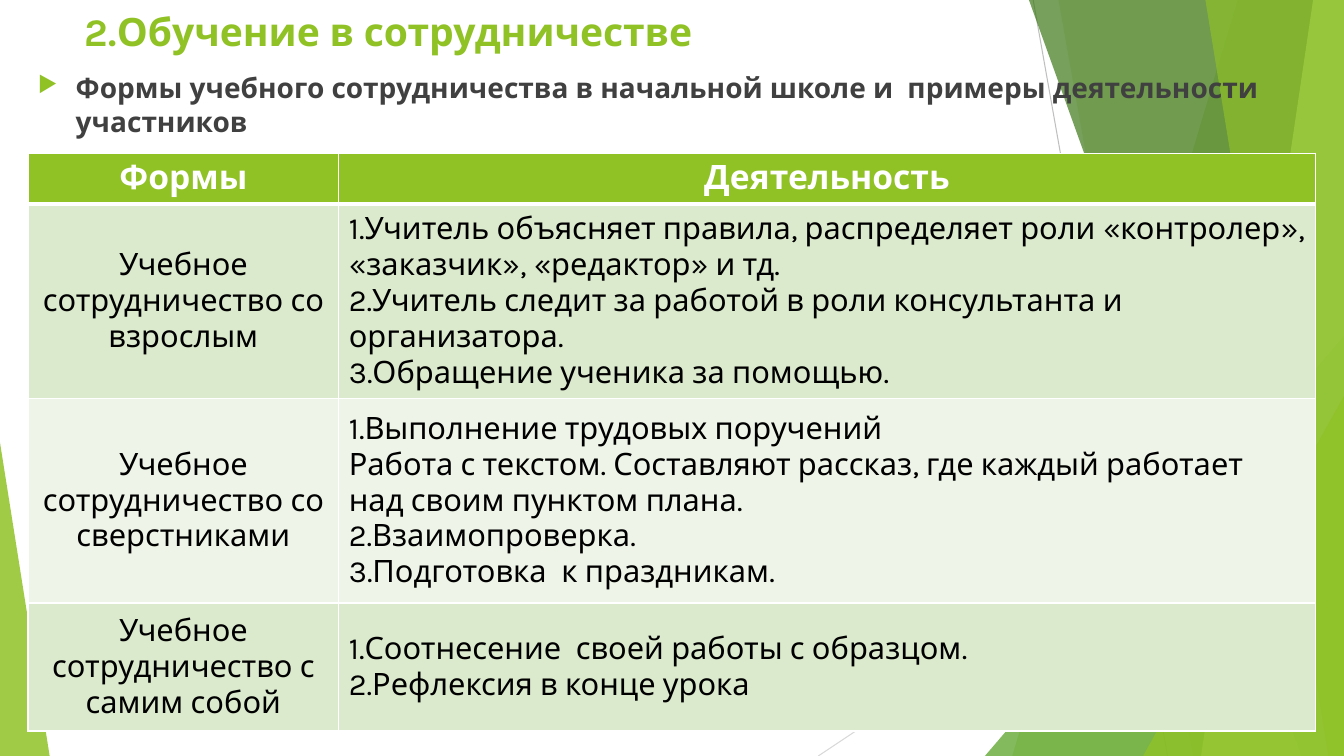
from dataclasses import dataclass

from lxml import etree
from pptx import Presentation
from pptx.dml.color import RGBColor
from pptx.enum import shapes, text
from pptx.oxml import ns
from pptx.util import Pt

WIDTH, HEIGHT = 960, 540


@dataclass(frozen=True)
class Theme:
    font: str = "Karla"
    green: str = "90C226"
    leaf: str = "54A021"
    forest: str = "3F7819"
    lime: str = "C0E474"
    band_dark: str = "DBE9CD"
    band_light: str = "EEF4E8"
    white: str = "FFFFFF"
    black: str = "000000"
    body: str = "404040"
    title_size: float = 27.9
    subtitle_size: float = 20
    header_size: float = 24
    cell_size: float = 22


THEME = Theme()


@dataclass(frozen=True)
class Ray:
    start: tuple[float, float]
    end: tuple[float, float]
    color: str


@dataclass(frozen=True)
class Facet:
    """A panel reaching the right edge, slanted on its left side."""
    top_x: float
    bottom_x: float
    color: str
    opacity: int


@dataclass(frozen=True)
class Corner:
    """A triangle standing on the bottom edge, its apex at one side."""
    left: float
    top: float
    width: float
    apex: float
    color: str
    opacity: int


@dataclass(frozen=True)
class Form:
    name: str
    activities: tuple[str, ...]
    height: float
    fill: str


RAYS = (
    Ray((738, 0), (834, HEIGHT), "BFBFBF"),
    Ray((WIDTH, 290), (584.5, HEIGHT), "D9D9D9"),
)
BACKDROP = (
    Facet(884, 723, THEME.green, 30),
    Facet(756, 852, THEME.green, 20),
    Corner(703.5, 240, 256.5, 1, THEME.leaf, 72),
    Facet(735, 929.5, THEME.forest, 70),
    Facet(938, 858, THEME.lime, 70),
    Facet(861, 949, THEME.green, 65),
    Corner(816.5, 283, 143.5, 1, THEME.green, 80),
    Corner(0, 316, 35.5, 0, THEME.green, 85),
)
HEADERS = ("Формы", "Деятельность")
HEADER_HEIGHT = 36
COLUMN_WIDTHS = (222, 697.5)
FORMS = (
    Form("Учебное сотрудничество со взрослым", (
        "1.Учитель объясняет правила, распределяет роли «контролер», «заказчик», «редактор» и тд.",
        "2.Учитель следит за работой в роли консультанта и организатора.",
        "3.Обращение ученика за помощью.",
    ), 119, THEME.band_dark),
    Form("Учебное сотрудничество со сверстниками", (
        "1.Выполнение трудовых поручений",
        "Работа с текстом. Составляют рассказ, где каждый работает над своим пунктом плана.",
        "2.Взаимопроверка.",
        "3.Подготовка  к праздникам.",
    ), 146, THEME.band_light),
    Form("Учебное сотрудничество с самим собой", (
        "1.Соотнесение  своей работы с образцом.",
        "2.Рефлексия в конце урока",
    ), 91.5, THEME.band_dark),
)


def draw_ray(page, ray: Ray) -> None:
    line = page.shapes.add_connector(
        shapes.MSO_CONNECTOR.STRAIGHT, *map(Pt, ray.start + ray.end))
    line.line.color.rgb = RGBColor.from_string(ray.color)
    line.line.width = Pt(0.75)
    etree.SubElement(line._element.spPr, ns.qn("a:effectLst"))


def draw_panel(page, panel: Facet | Corner) -> None:
    if isinstance(panel, Facet):
        builder = page.shapes.build_freeform(Pt(panel.top_x), 0)
        builder.add_line_segments([
            (Pt(WIDTH), 0), (Pt(WIDTH), Pt(HEIGHT)), (Pt(panel.bottom_x), Pt(HEIGHT))])
        shape = builder.convert_to_shape()
    else:
        shape = page.shapes.add_shape(
            shapes.MSO_SHAPE.ISOSCELES_TRIANGLE, Pt(panel.left), Pt(panel.top),
            Pt(panel.width), Pt(HEIGHT - panel.top))
        shape.adjustments[0] = panel.apex
    shape.shadow.inherit = False
    shape.line.fill.background()
    shape.fill.solid()
    shape.fill.fore_color.rgb = RGBColor.from_string(panel.color)
    color = shape._element.spPr.find(ns.qn("a:solidFill"))[0]
    etree.SubElement(color, ns.qn("a:alpha"), val=str(panel.opacity * 1000))


def write(frame, *lines: str, size: float, color: str, bold: bool = False,
          align=text.PP_ALIGN.LEFT) -> None:
    """Fill a text frame with one paragraph per line."""
    frame.word_wrap = True
    for index, line in enumerate(lines):
        para = frame.add_paragraph() if index else frame.paragraphs[0]
        para.alignment = align
        span = para.add_run()
        span.text = line
        span.font.name = THEME.font
        span.font.size = Pt(size)
        span.font.bold = bold
        span.font.color.rgb = RGBColor.from_string(color)


def add_bullet(para, indent: float) -> None:
    props = para._p.get_or_add_pPr()
    props.set("marL", str(Pt(indent)))
    props.set("indent", str(Pt(-indent)))
    color = etree.SubElement(props, ns.qn("a:buClr"))
    etree.SubElement(color, ns.qn("a:srgbClr"), val=THEME.green)
    etree.SubElement(props, ns.qn("a:buSzPct"), val="80000")
    etree.SubElement(props, ns.qn("a:buChar"), char="▶")


def style_cell(cell, fill: str, bottom: float = 1, top: float = 1) -> None:
    props = cell._tc.get_or_add_tcPr()
    for side, width in (("L", 1), ("R", 1), ("T", top), ("B", bottom)):
        border = etree.SubElement(props, ns.qn(f"a:ln{side}"), w=str(Pt(width)))
        paint = etree.SubElement(border, ns.qn("a:solidFill"))
        etree.SubElement(paint, ns.qn("a:srgbClr"), val=THEME.white)
    cell.fill.solid()
    cell.fill.fore_color.rgb = RGBColor.from_string(fill)


def add_forms_table(page) -> None:
    heights = (HEADER_HEIGHT, *(form.height for form in FORMS))
    table = page.shapes.add_table(
        len(heights), len(HEADERS), Pt(20), Pt(109.5),
        Pt(sum(COLUMN_WIDTHS)), Pt(sum(heights))).table
    table.horz_banding = False
    for column, width in zip(table.columns, COLUMN_WIDTHS):
        column.width = Pt(width)
    for row, height in zip(table.rows, heights):
        row.height = Pt(height)

    for index, header in enumerate(HEADERS):
        cell = table.cell(0, index)
        style_cell(cell, THEME.green, bottom=3)
        write(cell.text_frame, header, size=THEME.header_size, color=THEME.white,
              bold=True, align=text.PP_ALIGN.CENTER)
    for index, form in enumerate(FORMS, start=1):
        columns = (((form.name,), text.PP_ALIGN.CENTER),
                   (form.activities, text.PP_ALIGN.LEFT))
        for cell, (lines, align) in zip(table.rows[index].cells, columns):
            style_cell(cell, form.fill, top=3 if index == 1 else 1)
            cell.vertical_anchor = text.MSO_ANCHOR.MIDDLE
            write(cell.text_frame, *lines, size=THEME.cell_size,
                  color=THEME.black, align=align)


def main() -> None:
    deck = Presentation()
    deck.slide_width, deck.slide_height = Pt(WIDTH), Pt(HEIGHT)
    page = deck.slides.add_slide(deck.slide_layouts[5])
    for ray in RAYS:
        draw_ray(page, ray)
    for panel in BACKDROP:
        draw_panel(page, panel)

    title = page.shapes.title
    title.left, title.top, title.width, title.height = map(Pt, (53.5, 2, 677, 57))
    title.text_frame.auto_size = text.MSO_AUTO_SIZE.NONE
    title.text_frame.vertical_anchor = text.MSO_ANCHOR.TOP
    write(title.text_frame, "2.Обучение в сотрудничестве",
          size=THEME.title_size, color=THEME.green, bold=True)

    box = page.shapes.add_textbox(*map(Pt, (20, 47, 919.5, 67.5)))
    add_bullet(box.text_frame.paragraphs[0], indent=27)
    write(box.text_frame,
          "Формы учебного сотрудничества в начальной школе и  примеры деятельности  участников",
          size=THEME.subtitle_size, color=THEME.body, bold=True)

    add_forms_table(page)
    deck.save("out.pptx")


if __name__ == "__main__":
    main()
